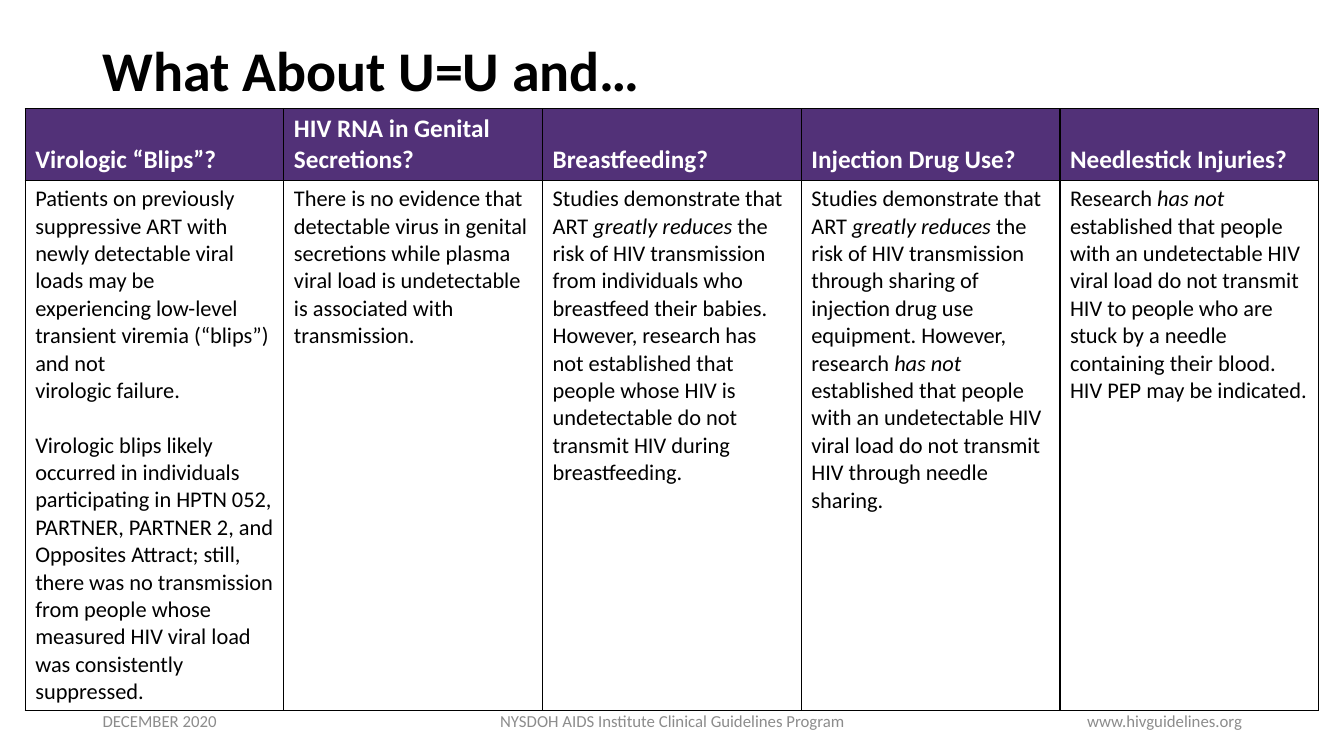
from lxml.etree import SubElement
from pptx import Presentation
from pptx.dml.color import RGBColor
from pptx.enum.text import MSO_ANCHOR, PP_ALIGN
from pptx.oxml.ns import qn
from pptx.util import Inches, Pt

# Content: *asterisks* mark italics, a newline marks a line break
TITLE = "What About U=U and…"
TOPICS = [
    ("Virologic “Blips”?", [
        "Patients on previously suppressive ART with newly detectable viral loads may be "
        "experiencing low-level transient viremia (“blips”) and not \nvirologic failure.",
        "Virologic blips likely occurred in individuals participating in HPTN 052, PARTNER, "
        "PARTNER 2, and Opposites Attract; still, there was no transmission from people whose "
        "measured HIV viral load was consistently suppressed."]),
    ("HIV RNA in Genital Secretions?", [
        "There is no evidence that detectable virus in genital secretions while plasma viral "
        "load is undetectable is associated with transmission."]),
    ("Breastfeeding?", [
        "Studies demonstrate that ART *greatly reduces *the risk of HIV transmission from "
        "individuals who breastfeed their babies. However, research has not established that "
        "people whose HIV is undetectable do not transmit HIV during breastfeeding."]),
    ("Injection Drug Use?", [
        "Studies demonstrate that ART *greatly reduces *the risk of HIV transmission through "
        "sharing of injection drug use equipment. However, research *has not *established that "
        "people with an undetectable HIV viral load do not transmit HIV through needle sharing."]),
    ("Needlestick Injuries?", [
        "Research *has not *established that people with an undetectable HIV viral load do not "
        "transmit HIV to people who are stuck by a needle containing their blood. "
        "HIV PEP may be indicated."]),
]
# Footer: text, left, width, alignment
FOOTERS = [
    ("NYSDOH AIDS Institute Clinical Guidelines Program", 4.42, 4.5, PP_ALIGN.CENTER),
    ("www.hivguidelines.org", 9.42, 3, PP_ALIGN.RIGHT),
    ("DECEMBER 2020", 0.92, 3, PP_ALIGN.LEFT),
]

FONT = "Calibri"
BLACK = RGBColor(0x00, 0x00, 0x00)
WHITE = RGBColor(0xFF, 0xFF, 0xFF)
PURPLE = RGBColor(0x52, 0x31, 0x78)
GRAY = RGBColor(0x8C, 0x8C, 0x8C)

TABLE_LEFT, TABLE_TOP, TABLE_WIDTH = 0.25, 1.08, 12.83
ROW_HEIGHTS = [0.71, 5.26]


def write(frame, paragraphs, size, color=BLACK, bold=False, align=PP_ALIGN.LEFT,
          line_spacing=None, gap=0):
    frame.word_wrap = True
    for index, text in enumerate(paragraphs):
        para = frame.add_paragraph() if index else frame.paragraphs[0]
        para.alignment = align
        if line_spacing:
            para.line_spacing = line_spacing
        if index:
            para.space_before = Pt(gap)
        for part, piece in enumerate(text.split("*")):
            for line_number, line in enumerate(piece.split("\n")):
                if line_number:
                    para.add_line_break()
                span = para.add_run()
                span.text = line
                font = span.font
                font.name, font.size, font.bold = FONT, Pt(size), bold
                font.italic = part % 2 == 1
                font.color.rgb = color


def add_text(page, text, left, top, width, height, **style):
    box = page.shapes.add_textbox(Inches(left), Inches(top), Inches(width), Inches(height))
    box.text_frame.vertical_anchor = MSO_ANCHOR.MIDDLE
    write(box.text_frame, [text], **style)


def add_borders(cell):
    properties = cell._tc.get_or_add_tcPr()
    for side in ("lnL", "lnR", "lnT", "lnB"):
        line = SubElement(properties, qn(f"a:{side}"), w=str(Pt(1)))
        fill = SubElement(line, qn("a:solidFill"))
        SubElement(fill, qn("a:srgbClr"), val=str(BLACK))


def add_topic_table(page):
    table = page.shapes.add_table(
        len(ROW_HEIGHTS), len(TOPICS), Inches(TABLE_LEFT), Inches(TABLE_TOP),
        Inches(TABLE_WIDTH), Inches(sum(ROW_HEIGHTS))).table
    table.horz_banding = False
    for row, height in zip(table.rows, ROW_HEIGHTS):
        row.height = Inches(height)
    for index, (heading, answer) in enumerate(TOPICS):
        table.columns[index].width = Inches(TABLE_WIDTH / len(TOPICS))
        head, body = table.cell(0, index), table.cell(1, index)
        for cell in (head, body):
            add_borders(cell)
        head.fill.solid()
        head.fill.fore_color.rgb = PURPLE
        head.vertical_anchor = MSO_ANCHOR.BOTTOM
        write(head.text_frame, [heading], size=18, color=WHITE, bold=True)
        body.fill.background()
        write(body.text_frame, answer, size=16, gap=19.5)


def main():
    deck = Presentation()
    deck.slide_width, deck.slide_height = Inches(13.33), Inches(7.5)
    page = deck.slides.add_slide(deck.slide_layouts[6])

    # Title, table, footer
    add_text(page, TITLE, 0.92, 0, 11.5, 1.45, size=40, bold=True, line_spacing=0.9)
    add_topic_table(page)
    for text, left, width, align in FOOTERS:
        add_text(page, text, left, 6.95, width, 0.4, size=12, color=GRAY, align=align)

    deck.save("out.pptx")


if __name__ == "__main__":
    main()
